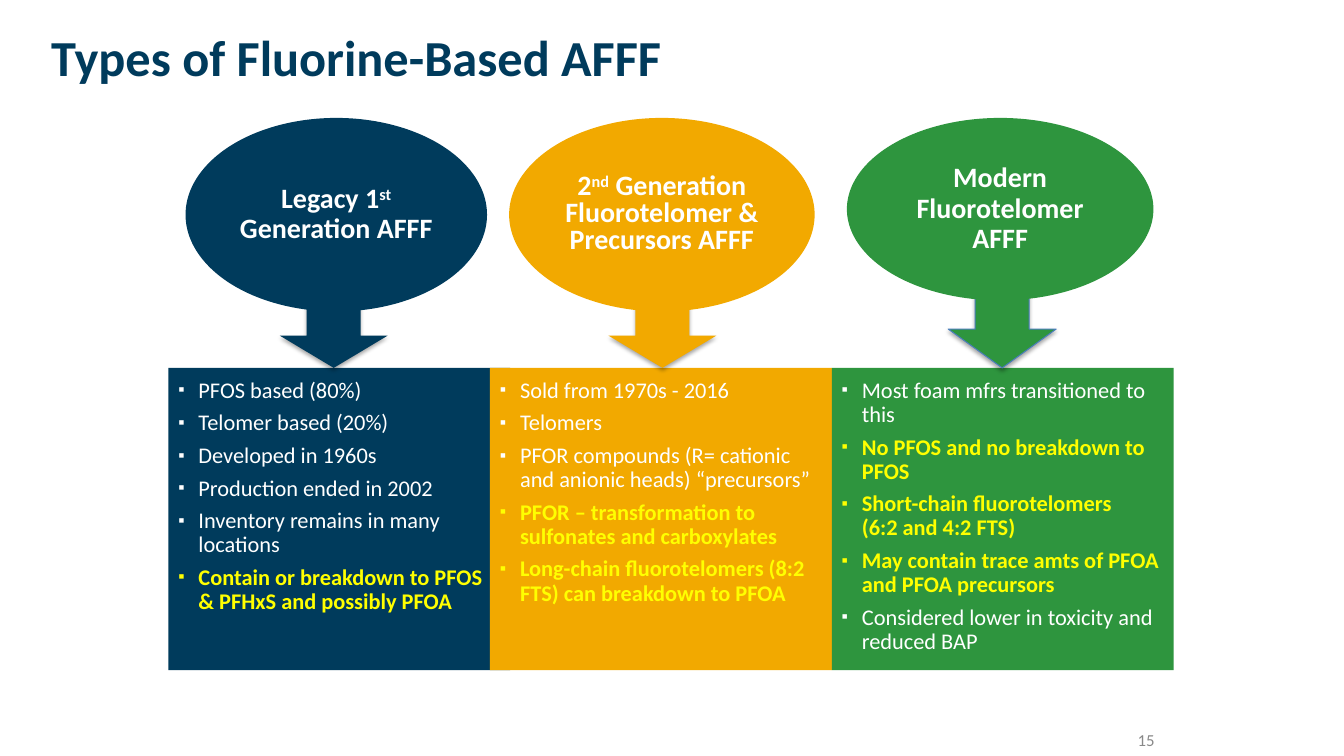
import pptx
import pptx.util
import pptx.dml.color
import pptx.enum.shapes
import pptx.enum.text
import pptx.oxml
import pptx.oxml.ns

Inches, Pt = pptx.util.Inches, pptx.util.Pt
RGBColor = pptx.dml.color.RGBColor
SHAPE = pptx.enum.shapes.MSO_SHAPE
ALIGN = pptx.enum.text.PP_ALIGN
ANCHOR = pptx.enum.text.MSO_ANCHOR

NAVY = RGBColor(0x00, 0x3B, 0x5C)
GOLD = RGBColor(0xF2, 0xA9, 0x00)
GREEN = RGBColor(0x2E, 0x95, 0x3E)
BLUE = RGBColor(0x4B, 0x7E, 0xBC)
GRAY = RGBColor(0x89, 0x89, 0x89)
WHITE = RGBColor(0xFF, 0xFF, 0xFF)
YELLOW = RGBColor(0xFF, 0xFF, 0x00)

TITLE = "Types of Fluorine-Based AFFF"
PAGE = "15"

# Heading runs are (text, raised); points are (text, stressed).
TYPES = [
    dict(color=NAVY, edge=None, left=1.67, oval=(1.84, 2.99, 1.92),
         arrow=(3.31, 0.64), pitch=0.9,
         head=[("Legacy 1", False), ("st", True),
               (" Generation AFFF", False)],
         points=[("PFOS based (80%)", False),
                 ("Telomer based (20%)", False),
                 ("Developed in 1960s", False),
                 ("Production ended in 2002", False),
                 ("Inventory remains in many locations", False),
                 ("Contain or breakdown to PFOS & PFHxS and possibly PFOA",
                  True)]),
    dict(color=GOLD, edge=None, left=4.86, oval=(5.05, 3.03, 1.92),
         arrow=(6.57, 0.64), pitch=0.8,
         head=[("2", False), ("nd", True),
               (" Generation Fluorotelomer & Precursors AFFF", False)],
         points=[("Sold from 1970s - 2016", False),
                 ("Telomers", False),
                 ("PFOR compounds (R= cationic and anionic heads) "
                  "“precursors”", False),
                 ("PFOR – transformation to sulfonates and carboxylates",
                  True),
                 ("Long-chain fluorotelomers (8:2 FTS) can breakdown to PFOA",
                  True)]),
    dict(color=GREEN, edge=BLUE, left=8.25, oval=(8.4, 3.04, 1.81),
         arrow=(9.94, 0.77), pitch=0.9,
         head=[("Modern Fluorotelomer AFFF", False)],
         points=[("Most foam mfrs transitioned to this", False),
                 ("No PFOS and no breakdown to PFOS", True),
                 ("Short-chain fluorotelomers \v(6:2 and 4:2 FTS)", True),
                 ("May contain trace amts of PFOA and PFOA precursors", True),
                 ("Considered lower in toxicity and reduced BAP", False)]),
]

OVAL_TOP = 1.17
PANEL_TOP, PANEL_WIDE, PANEL_HIGH = 3.65, 3.39, 3
ARROW_WIDE = 1.07
INDENT = Inches(0.2)


def style(font, size, color, bold=False):
    font.name, font.size, font.bold = "Calibri", Pt(size), bold
    font.color.rgb = color


def add_label(slide, box, text, size, color, bold, align, anchor):
    frame = slide.shapes.add_textbox(*map(Inches, box)).text_frame
    frame.word_wrap = True
    frame.vertical_anchor = anchor
    para = frame.paragraphs[0]
    para.text, para.alignment = text, align
    style(para.font, size, color, bold)


def add_solid(slide, kind, box, color, edge=None):
    shape = slide.shapes.add_shape(kind, *map(Inches, box))
    shape.shadow.inherit = False
    shape.fill.solid()
    shape.fill.fore_color.rgb = color
    if edge is None:
        shape.line.fill.background()
    else:
        shape.line.color.rgb = edge
        shape.line.width = Pt(0.75)
    return shape


def add_shadow(shape):
    """Cast a soft black shadow straight down."""
    effects = shape._element.spPr.find(pptx.oxml.ns.qn("a:effectLst"))
    effects.append(pptx.oxml.parse_xml(
        f'<a:outerShdw {pptx.oxml.ns.nsdecls("a")} blurRad="{Pt(3.1)}" '
        f'dist="{Pt(1.8)}" dir="5400000" rotWithShape="0">'
        '<a:srgbClr val="000000"><a:alpha val="35000"/></a:srgbClr>'
        '</a:outerShdw>'))


def add_bullet(para):
    props = para._p.get_or_add_pPr()
    props.set("marL", str(INDENT))
    props.set("indent", str(-INDENT))
    for tag in ('buSzPct val="80000"', 'buFont typeface="Arial"',
                'buChar char="▪"'):
        props.append(pptx.oxml.parse_xml(
            f'<a:{tag} {pptx.oxml.ns.nsdecls("a")}/>'))


def fill_panel(panel, points):
    frame = panel.text_frame
    frame.word_wrap = True
    frame.vertical_anchor = ANCHOR.TOP
    frame.margin_top = Inches(0.11)
    for i, (text, stressed) in enumerate(points):
        para = frame.add_paragraph() if i else frame.paragraphs[0]
        para.text, para.alignment = text, ALIGN.LEFT
        para.line_spacing = 0.9
        if i:
            para.space_before = Pt(6)
        add_bullet(para)
        style(para.font, 16, YELLOW if stressed else WHITE, stressed)


def fill_oval(oval, head, pitch):
    frame = oval.text_frame
    frame.word_wrap = True
    frame.vertical_anchor = ANCHOR.MIDDLE
    frame.margin_left = frame.margin_right = 0
    frame.margin_top = frame.margin_bottom = 0
    para = frame.paragraphs[0]
    para.alignment, para.line_spacing = ALIGN.CENTER, pitch
    style(para.font, 20, WHITE, True)
    for text, raised in head:
        run = para.add_run()
        run.text = text
        if raised:
            run.font._element.set("baseline", "30000")


def add_type(slide, kind):
    color = kind["color"]
    panel = add_solid(slide, SHAPE.RECTANGLE,
                      (kind["left"], PANEL_TOP, PANEL_WIDE, PANEL_HIGH), color)
    fill_panel(panel, kind["points"])
    mid, high = kind["arrow"]
    arrow = add_solid(slide, SHAPE.DOWN_ARROW,
                      (mid - ARROW_WIDE / 2, PANEL_TOP - high,
                       ARROW_WIDE, high), color, kind["edge"])
    add_shadow(arrow)
    left, wide, high = kind["oval"]
    oval = add_solid(slide, SHAPE.OVAL, (left, OVAL_TOP, wide, high), color)
    fill_oval(oval, kind["head"], kind["pitch"])


def main():
    deck = pptx.Presentation()
    deck.slide_width, deck.slide_height = Inches(13.33), Inches(7.5)
    slide = deck.slides.add_slide(deck.slide_layouts[6])
    add_label(slide, (0.41, 0.21, 6.86, 0.55), TITLE, 36, NAVY, True,
              ALIGN.LEFT, ANCHOR.TOP)
    add_label(slide, (10.98, 7.25, 0.57, 0.17), PAGE, 12, GRAY, False,
              ALIGN.RIGHT, ANCHOR.MIDDLE)
    for kind in TYPES:
        add_type(slide, kind)
    deck.save("out.pptx")


if __name__ == "__main__":
    main()
